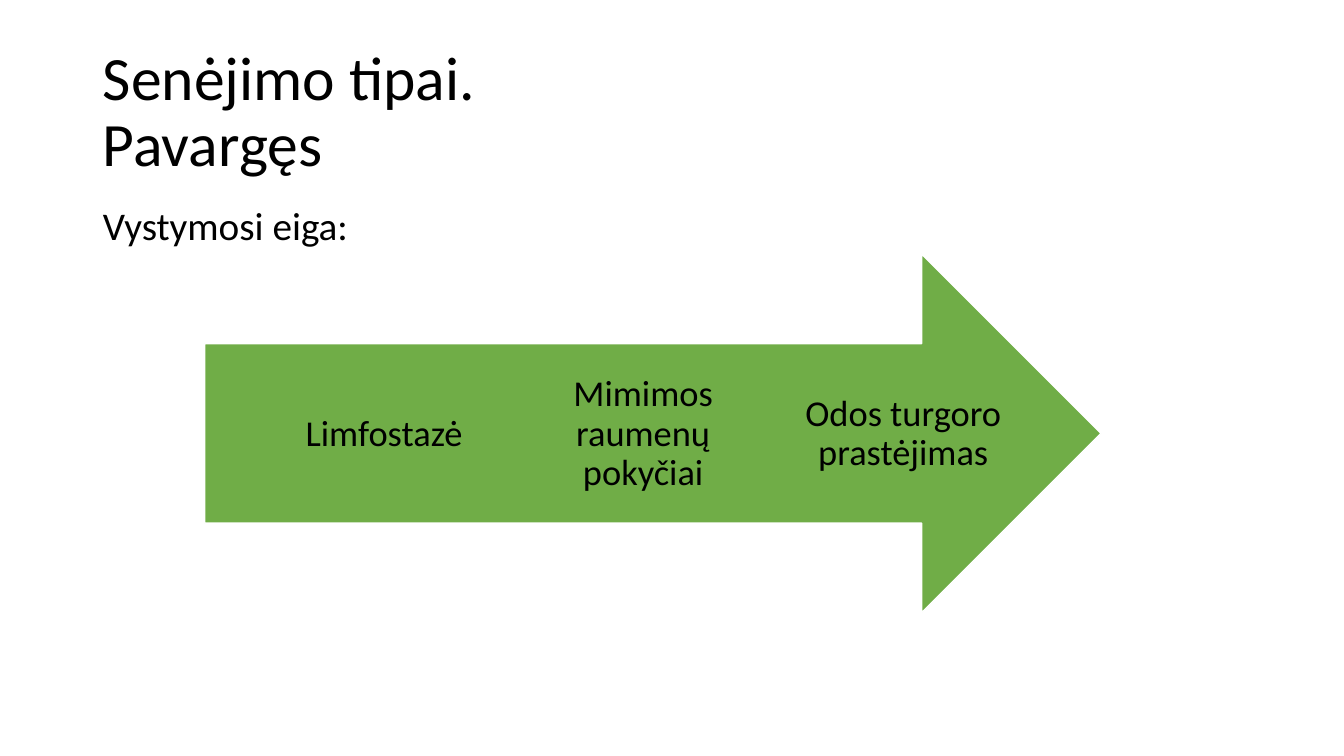
import pptx
import pptx.dml.color
import pptx.enum.shapes
import pptx.enum.text
import pptx.oxml
import pptx.oxml.ns
import pptx.util

BLACK = pptx.dml.color.RGBColor(0x00, 0x00, 0x00)
WHITE = pptx.dml.color.RGBColor(0xFF, 0xFF, 0xFF)
GREEN = pptx.dml.color.RGBColor(0x70, 0xAD, 0x47)
ALIGN = pptx.enum.text.PP_ALIGN
ANCHOR = pptx.enum.text.MSO_ANCHOR


def px(length):
    """Turn px, a hundredth of an inch each, into EMU."""
    return pptx.util.Emu(length * 9144)


def assign(target, values):
    for name, value in values.items():
        setattr(target, name, value)


class SlideBuilder:
    font_name = "Calibri"
    line_spacing = 0.9

    def __init__(self, deck):
        self.page = deck.slides.add_slide(deck.slide_layouts[1])

    def fill_text(self, box, text, size, align, anchor, inset_x=10, inset_y=5):
        frame = box.text_frame
        assign(frame, {
            "word_wrap": True,
            "auto_size": pptx.enum.text.MSO_AUTO_SIZE.NONE,
            "vertical_anchor": anchor,
            "margin_left": px(inset_x), "margin_right": px(inset_x),
            "margin_top": px(inset_y), "margin_bottom": px(inset_y),
        })
        para = frame.paragraphs[0]
        para.text = text
        assign(para, {
            "alignment": align,
            "line_spacing": self.line_spacing,
            "space_before": pptx.util.Pt(0),
        })
        for span in para.runs:
            assign(span.font, {"name": self.font_name, "size": pptx.util.Pt(size)})
            span.font.color.rgb = BLACK
        return para

    def placeholder(self, index, area, text, size, anchor):
        box = self.page.placeholders[index]
        assign(box, dict(zip(("left", "top", "width", "height"), map(px, area))))
        return self.fill_text(box, text, size, ALIGN.LEFT, anchor)

    def title(self, area, text):
        self.placeholder(0, area, text, 44, ANCHOR.MIDDLE)

    def body(self, area, text):
        para = self.placeholder(1, area, text, 28, ANCHOR.TOP)
        # Plain line without bullet or indent
        props = para._p.get_or_add_pPr()
        props.set("marL", "0")
        props.set("indent", "0")
        props.append(pptx.oxml.parse_xml(
            "<a:buNone %s/>" % pptx.oxml.ns.nsdecls("a")))

    def group(self):
        return self.page.shapes.add_group_shape()

    def arrow(self, group, area):
        arrow = group.shapes.add_shape(
            pptx.enum.shapes.MSO_SHAPE.RIGHT_ARROW, *map(px, area))
        arrow.shadow.inherit = False
        arrow.fill.solid()
        arrow.fill.fore_color.rgb = GREEN
        arrow.line.color.rgb = WHITE
        arrow.line.width = pptx.util.Pt(1)

    def label(self, group, area, text):
        box = group.shapes.add_textbox(*map(px, area))
        self.fill_text(box, text, 26, ALIGN.CENTER, ANCHOR.MIDDLE, 0, 29)


def main():
    deck = pptx.Presentation()
    deck.slide_width, deck.slide_height = px(1333), px(750)
    builder = SlideBuilder(deck)

    # Heading and lead-in
    builder.title((92, 40, 1150, 145), "Senėjimo tipai.\vPavargęs")
    builder.body((92, 200, 1150, 476), "Vystymosi eiga:")

    # Process arrow with evenly spaced stages
    process = builder.group()
    builder.arrow(process, (203, 252, 889, 356))
    stages = ("Limfostazė", "Mimimos raumenų pokyčiai", "Odos turgoro prastėjimas")
    for number, stage in enumerate(stages):
        builder.label(process, (274 + number * 515 // 2, 342, 214, 178), stage)

    deck.save("out.pptx")


if __name__ == "__main__":
    main()
